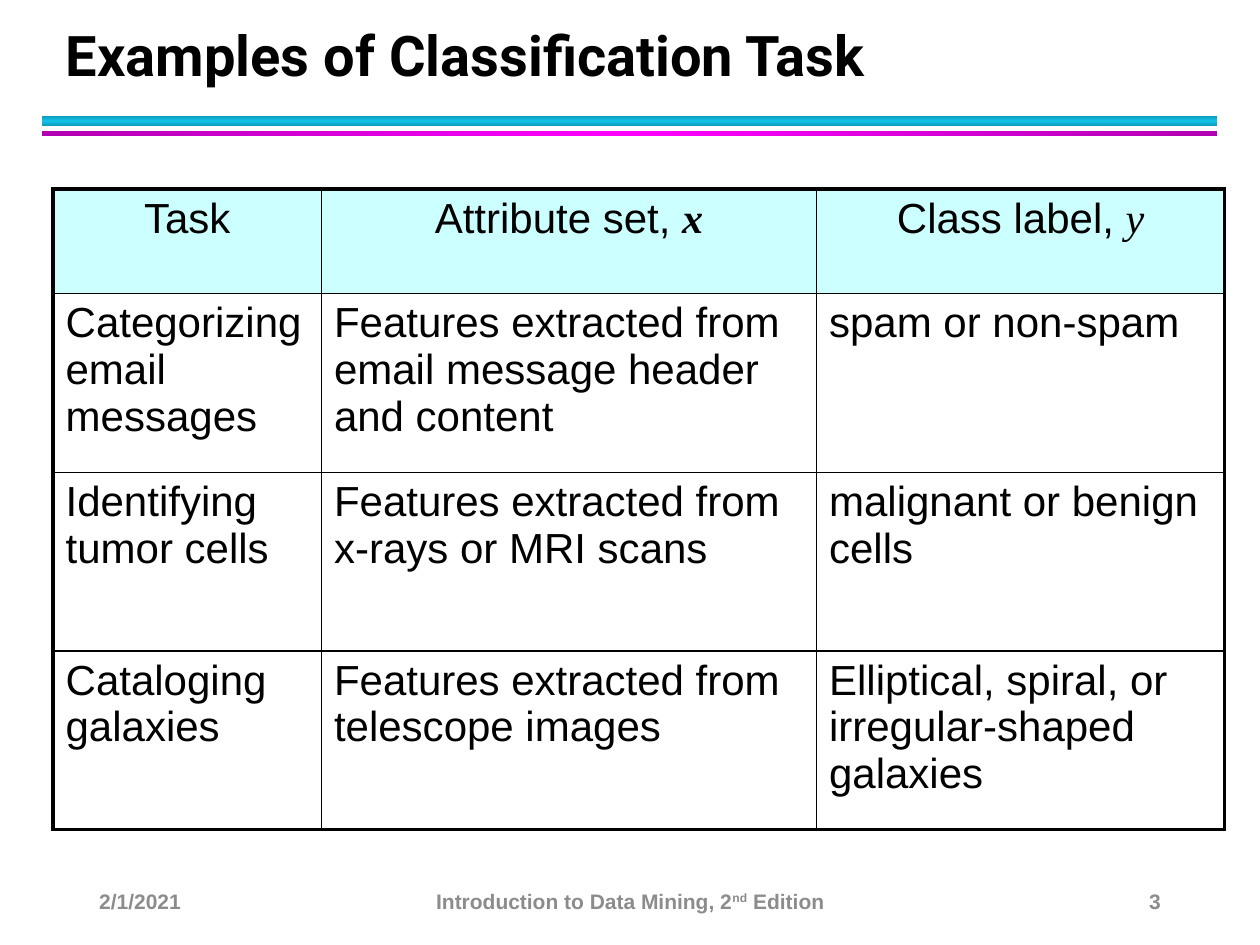
from copy import deepcopy

from lxml import etree
from pptx import Presentation
from pptx.dml.color import RGBColor
from pptx.enum.shapes import MSO_SHAPE
from pptx.enum.text import MSO_ANCHOR, PP_ALIGN
from pptx.oxml.ns import qn
from pptx.util import Cm, Pt

RECT = MSO_SHAPE.RECTANGLE
BOTTOM, MIDDLE = MSO_ANCHOR.BOTTOM, MSO_ANCHOR.MIDDLE
LEFT, CENTER, RIGHT = PP_ALIGN.LEFT, PP_ALIGN.CENTER, PP_ALIGN.RIGHT

BLACK = RGBColor(0x00, 0x00, 0x00)
GREY = RGBColor(0x8C, 0x8C, 0x8C)
HEADER = RGBColor(0xCC, 0xFF, 0xFF)
TEAL = RGBColor(0x0E, 0x9B, 0xBA)
CYAN = RGBColor(0x12, 0xC2, 0xE9)
PURPLE = RGBColor(0xB2, 0x00, 0xB2)
MAGENTA = RGBColor(0xFF, 0x00, 0xFF)

TITLE_FONT, BODY_FONT, MATH_FONT = "Roboto", "Arial", "Times New Roman"
THIN, THICK = Pt(1), Pt(2.25)


class SlideBuilder:
    title_size, table_size, footer_size = Pt(32), Pt(24), Pt(12)

    def __init__(self, prs):
        self.s = prs.slides.add_slide(prs.slide_layouts[5])

    def run(self, p, text, size, color, font=BODY_FONT, bold=False, italic=False):
        r = p.add_run()
        r.text = text
        r.font.name, r.font.size = font, size
        r.font.bold, r.font.italic = bold, italic
        r.font.color.rgb = color
        return r

    def title(self, text, x, y, w, h):
        sp = self.s.shapes.title
        sp.left, sp.top, sp.width, sp.height = Cm(x), Cm(y), Cm(w), Cm(h)
        tf = sp.text_frame
        tf.vertical_anchor = BOTTOM
        p = tf.paragraphs[0]
        p.alignment, p.line_spacing = LEFT, Pt(36)
        self.run(p, text, self.title_size, BLACK, TITLE_FONT, bold=True)

    def bar(self, x, y, w, h, edge, middle, angle):
        sp = self.s.shapes.add_shape(RECT, Cm(x), Cm(y), Cm(w), Cm(h))
        sp.shadow.inherit = False
        sp.line.fill.background()
        sp.fill.gradient()
        sp.fill.gradient_angle = angle
        first = sp.fill._fill._gradFill.gsLst[0]
        first.addnext(deepcopy(first))
        stops = zip(sp.fill.gradient_stops, (0, 0.5, 1), (edge, middle, edge))
        for stop, position, color in stops:
            stop.position, stop.color.rgb = position, color

    def border(self, cell, side, width):
        ln = etree.SubElement(cell._tc.get_or_add_tcPr(), qn(f"a:ln{side}"), w=str(width))
        fill = etree.SubElement(ln, qn("a:solidFill"))
        etree.SubElement(fill, qn("a:srgbClr"), val=str(BLACK))

    def table(self, rows, x, y, widths, heights):
        n_rows, n_cols = len(heights), len(widths)
        frame = self.s.shapes.add_table(
            n_rows, n_cols, Cm(x), Cm(y), Cm(sum(widths)), Cm(sum(heights)))
        table = frame.table
        table.first_row = table.horz_banding = False
        for column, width in zip(table.columns, widths):
            column.width = Cm(width)
        for row, height in zip(table.rows, heights):
            row.height = Cm(height)
        for i, row in enumerate(rows):
            for j, content in enumerate(row):
                cell = table.cell(i, j)
                outer = {"L": j == 0, "R": j == n_cols - 1,
                         "T": i == 0, "B": i == n_rows - 1}
                for side, is_outer in outer.items():
                    self.border(cell, side, THICK if is_outer else THIN)
                p = cell.text_frame.paragraphs[0]
                p.space_after = Pt(4)
                if i == 0:
                    cell.fill.solid()
                    cell.fill.fore_color.rgb = HEADER
                    p.alignment = CENTER
                else:
                    cell.fill.background()
                text, symbol, bold = content if i == 0 else (content, "", False)
                self.run(p, text, self.table_size, BLACK)
                if symbol:
                    self.run(p, symbol, self.table_size, BLACK, MATH_FONT, bold, True)

    def footer(self, parts, x, w, align):
        sp = self.s.shapes.add_textbox(Cm(x), Cm(17.65), Cm(w), Cm(1.02))
        tf = sp.text_frame
        tf.word_wrap, tf.vertical_anchor = True, MIDDLE
        p = tf.paragraphs[0]
        p.alignment = align
        for text, baseline in parts:
            r = self.run(p, text, self.footer_size, GREY, bold=True)
            if baseline:
                r.font._element.set("baseline", str(baseline))


def main():
    prs = Presentation()
    prs.slide_width, prs.slide_height = Cm(25.4), Cm(19.05)
    slide = SlideBuilder(prs)

    slide.bar(0.84, 2.34, 23.7, 0.2, TEAL, CYAN, 90)
    slide.bar(0.84, 2.64, 23.7, 0.1, PURPLE, MAGENTA, 0)
    slide.title("Examples of Classification Task", 1.07, 0.43, 23.01, 1.47)

    rows = [
        [("Task", "", False), ("Attribute set, ", "x", True), ("Class label, ", "y", False)],
        ["Categorizing email messages",
         "Features extracted from email message header and content",
         "spam or non-spam"],
        ["Identifying tumor cells",
         "Features extracted from x-rays or MRI scans",
         "malignant or benign cells"],
        ["Cataloging galaxies",
         "Features extracted from telescope images",
         "Elliptical, spiral, or irregular-shaped galaxies"],
    ]
    slide.table(rows, 1.07, 3.81, [5.41, 9.98, 8.23], [2.11] + [3.6] * 3)

    slide.footer([("2/1/2021", 0)], 1.75, 5.72, LEFT)
    slide.footer([("Introduction to Data Mining, 2", 0), ("nd", 30000), (" Edition", 0)],
                 8.41, 8.59, CENTER)
    slide.footer([("3", 0)], 17.93, 5.72, RIGHT)

    prs.save("out.pptx")


if __name__ == "__main__":
    main()
